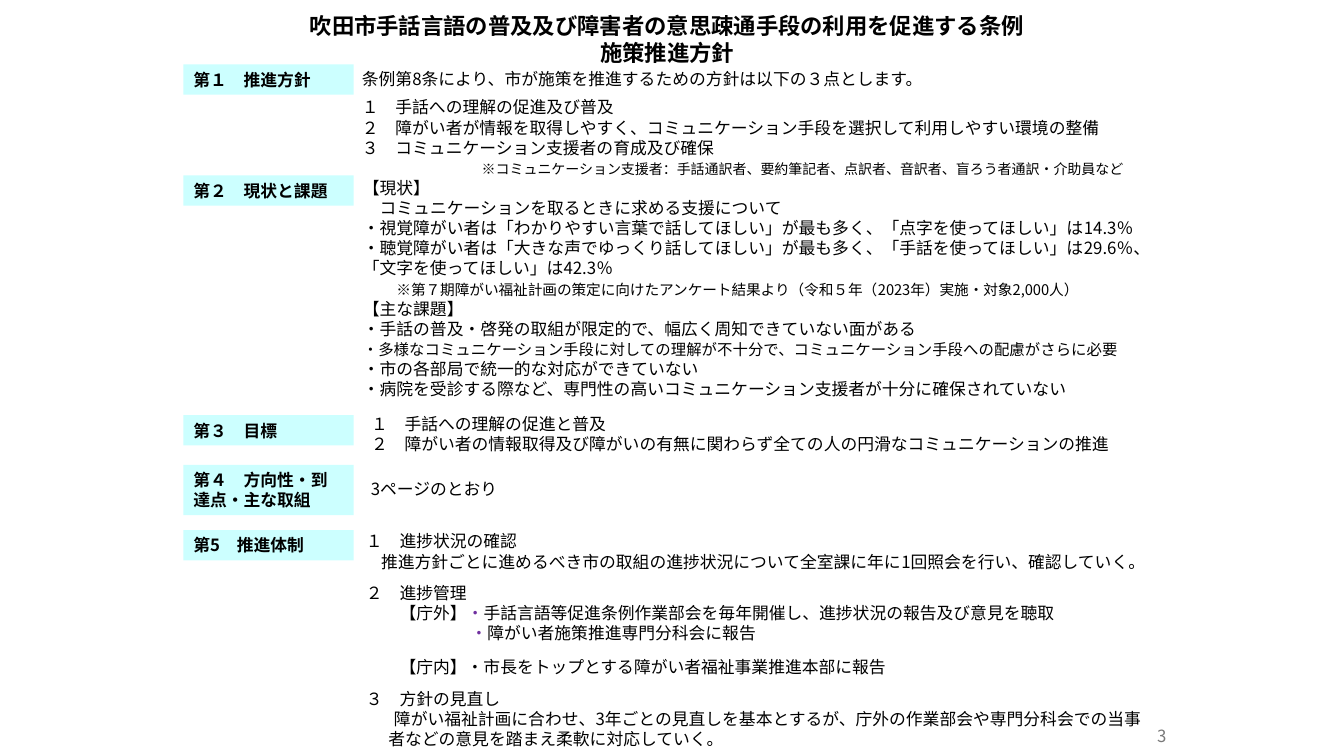
from lxml import etree
from pptx import Presentation
from pptx.dml.color import RGBColor
from pptx.enum import shapes, text
from pptx.oxml import ns
from pptx.util import Pt

THEME = {
    "font": "Noto Sans CJK JP",
    "ink": "000000", "label": "CCFFFF", "accent": "7030A0", "muted": "797979",
    "title": 16, "body": 12, "tight": 11, "source": 10.5, "note": 10,
}


def place(shape, left, top, width, height, anchor=text.MSO_ANCHOR.TOP):
    """Position a shape and prepare its text frame."""
    shape.left, shape.top, shape.width, shape.height = map(Pt, (left, top, width, height))
    frame = shape.text_frame
    frame.word_wrap = True
    frame.auto_size = text.MSO_AUTO_SIZE.NONE
    frame.vertical_anchor = anchor
    frame.margin_left = frame.margin_right = Pt(7.2)
    frame.margin_top = frame.margin_bottom = Pt(3.6)
    return frame


def write(frame, words, size=THEME["body"], color=THEME["ink"], bold=False,
          align=text.PP_ALIGN.LEFT, indent=0, gap=0, line=14.4):
    """Add one paragraph; words is a string or a list of (string, colour)."""
    paragraph = frame.paragraphs[0]
    if paragraph.runs:
        paragraph = frame.add_paragraph()
    properties = paragraph._p.get_or_add_pPr()
    properties.set("marL", str(Pt(indent)))
    properties.set("indent", "0")
    etree.SubElement(properties, ns.qn("a:buNone"))
    paragraph.alignment = align
    paragraph.line_spacing = Pt(line)
    paragraph.space_before, paragraph.space_after = Pt(gap), Pt(0)
    for part, part_color in [(words, color)] if isinstance(words, str) else words:
        run = paragraph.add_run()
        run.text = part
        run.font.size, run.font.bold = Pt(size), bold
        run.font.color.rgb = RGBColor.from_string(part_color)
        run.font.name = THEME["font"]
        east_asian = etree.SubElement(run._r.get_or_add_rPr(), ns.qn("a:ea"))
        east_asian.set("typeface", THEME["font"])


prs = Presentation()
prs.slide_width, prs.slide_height = Pt(960), Pt(540)
slide = prs.slides.add_slide(prs.slide_layouts[4])
title, policy, issues, goals, system = slide.placeholders

# Title
heading = place(title, 126.7, 5, 699.8, 46)
for words in ("吹田市手話言語の普及及び障害者の意思疎通手段の利用を促進する条例", "施策推進方針"):
    write(heading, words, size=THEME["title"], bold=True,
          align=text.PP_ALIGN.CENTER, line=19.2)

# Section labels
for words, top, height in (
    ("第１　推進方針", 46.1, 21.6),
    ("第２　現状と課題", 125.3, 21.6),
    ("第３　目標", 296.6, 21.6),
    ("第４　方向性・到達点・主な取組", 332, 36),
    ("第5　推進体制", 378.7, 21.6),
):
    label = slide.shapes.add_shape(shapes.MSO_SHAPE.RECTANGLE, 0, 0, 0, 0)
    label.shadow.inherit = False
    label.fill.solid()
    label.fill.fore_color.rgb = RGBColor.from_string(THEME["label"])
    label.line.fill.background()
    write(place(label, 131, top, 121.7, height, text.MSO_ANCHOR.MIDDLE), words, bold=True)

# Section contents, each line with its own format
sections = (
    (policy, (251.3, 45.4, 578.2, 73.4), (
        ("条例第8条により、市が施策を推進するための方針は以下の３点とします。", {}),
        ("１　手話への理解の促進及び普及", {"gap": 6}),
        ("２　障がい者が情報を取得しやすく、コミュニケーション手段を選択して利用しやすい環境の整備", {}),
        ("３　コミュニケーション支援者の育成及び確保", {}),
    )),
    (issues, (252, 123.1, 587.5, 166.3), (
        ("【現状】", {}),
        ("コミュニケーションを取るときに求める支援について", {"indent": 12}),
        ("・視覚障がい者は「わかりやすい言葉で話してほしい」が最も多く、「点字を使ってほしい」は14.3％", {}),
        ("・聴覚障がい者は「大きな声でゆっくり話してほしい」が最も多く、「手話を使ってほしい」は29.6％、", {}),
        ("「文字を使ってほしい」は42.3％", {}),
        ("※第７期障がい福祉計画の策定に向けたアンケート結果より（令和５年（2023年）実施・対象2,000人）",
         {"size": THEME["source"], "indent": 24}),
        ("【主な課題】", {}),
        ("・手話の普及・啓発の取組が限定的で、幅広く周知できていない面がある", {}),
        ("・多様なコミュニケーション手段に対しての理解が不十分で、コミュニケーション手段への配慮がさらに必要",
         {"size": THEME["tight"]}),
        ("・市の各部局で統一的な対応ができていない", {}),
        ("・病院を受診する際など、専門性の高いコミュニケーション支援者が十分に確保されていない", {}),
    )),
    (goals, (257.8, 291.6, 573.8, 36), (
        ("１　手話への理解の促進と普及", {}),
        ("２　障がい者の情報取得及び障がいの有無に関わらず全ての人の円滑なコミュニケーションの推進", {}),
    )),
    (system, (254.2, 375.8, 578.2, 164.2), (
        ("１　進捗状況の確認", {}),
        ("推進方針ごとに進めるべき市の取組の進捗状況について全室課に年に1回照会を行い、確認していく。",
         {"indent": 10.75}),
        ("２　進捗管理", {"gap": 8}),
        ([("【庁外】", THEME["ink"]), ("・", THEME["accent"]),
          ("手話言語等促進条例作業部会を毎年開催し、進捗状況の報告及び意見を聴取", THEME["ink"])],
         {"indent": 24}),
        ([("・", THEME["accent"]), ("障がい者施策推進専門分科会に報告", THEME["ink"])],
         {"indent": 74.7}),
        ("【庁内】・市長をトップとする障がい者福祉事業推進本部に報告", {"indent": 24, "gap": 10}),
        ("３　方針の見直し", {"gap": 8}),
        ("障がい福祉計画に合わせ、3年ごとの見直しを基本とするが、庁外の作業部会や専門分科会での当事",
         {"indent": 20}),
        ("者などの意見を踏まえ柔軟に対応していく。", {"indent": 16}),
    )),
)
for section, box, lines in sections:
    frame = place(section, *box)
    for words, style in lines:
        write(frame, words, **style)

# Supporter note, page reference and slide number
for words, box, anchor, style in (
    ("※コミュニケーション支援者：手話通訳者、要約筆記者、点訳者、音訳者、盲ろう者通訳・介助員など",
     (337, 110.9, 541.4, 19.4), text.MSO_ANCHOR.TOP, {"size": THEME["note"], "line": 12}),
    ("3ページのとおり", (257.8, 338.4, 573.8, 21.6), text.MSO_ANCHOR.TOP, {}),
    ("3", (678.2, 511.2, 162, 28.8), text.MSO_ANCHOR.MIDDLE,
     {"color": THEME["muted"], "align": text.PP_ALIGN.RIGHT}),
):
    remark = slide.shapes.add_textbox(0, 0, 0, 0)
    write(place(remark, *box, anchor), words, **style)

prs.save("out.pptx")
